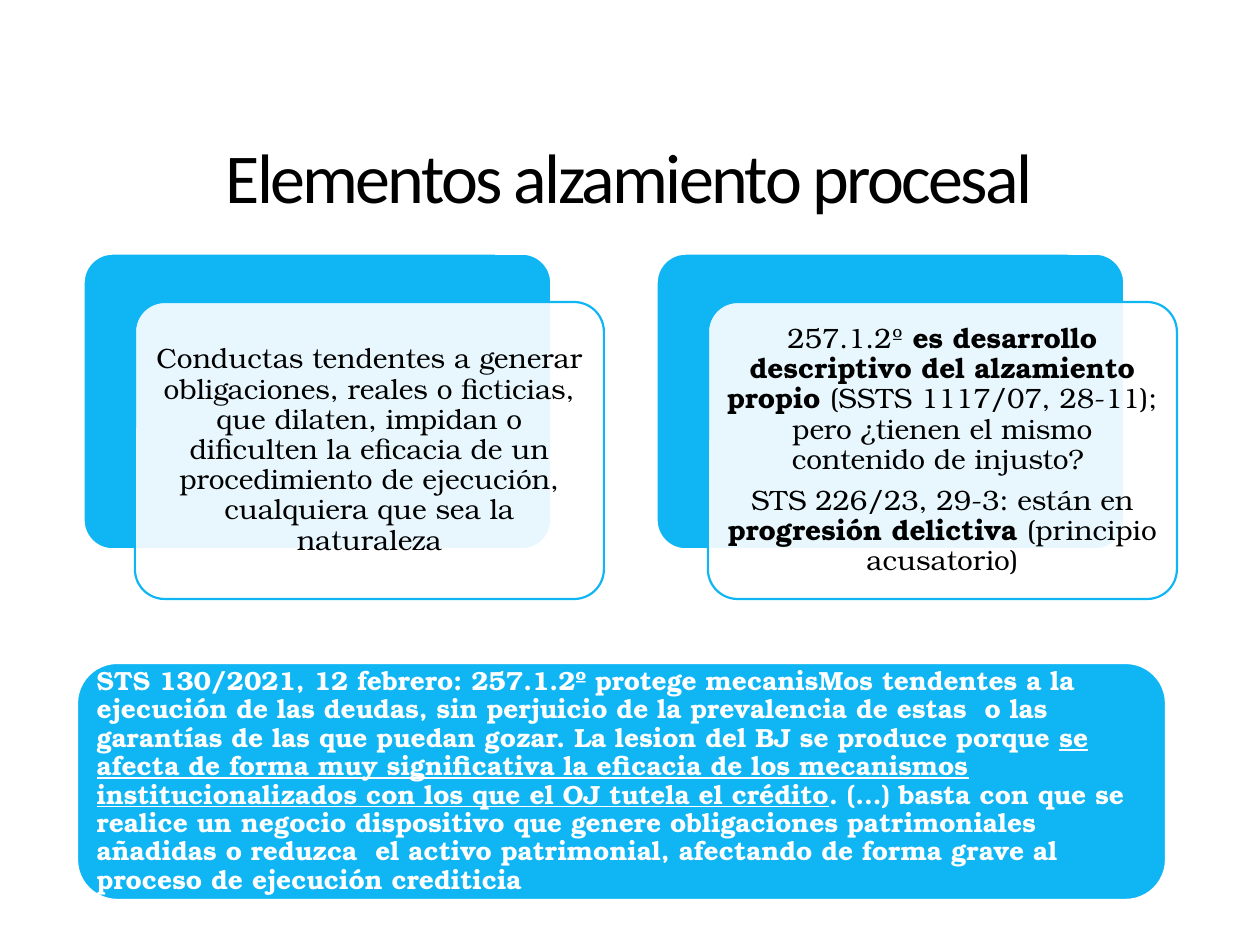
from lxml.etree import SubElement
from pptx import Presentation
from pptx.dml.color import RGBColor
from pptx.enum.shapes import MSO_SHAPE
from pptx.enum.text import MSO_ANCHOR, MSO_AUTO_SIZE, PP_ALIGN
from pptx.oxml.ns import qn
from pptx.util import Pt

COLORS = {"blue": "10B6F4", "white": "FFFFFF", "black": "000000"}
BODY_FONT = "TeX Gyre Bonum"
TITLE = "Elementos alzamiento procesal"

# Each card is a list of paragraphs; each paragraph a list of (text, style).
CARDS = [
    [[("Conductas tendentes a generar obligaciones, reales o ficticias, que dilaten, "
       "impidan o dificulten la eficacia de un procedimiento de ejecución, "
       "cualquiera que sea la naturaleza", "")]],
    [[("257.1.2º ", ""),
      ("es desarrollo descriptivo del alzamiento propio ", "bold"),
      ("(SSTS 1117/07, 28-11); pero ¿tienen el mismo contenido de injusto? ", "")],
     [("STS 226/23, 29-3: están en ", ""),
      ("progresión delictiva ", "bold"),
      ("(principio acusatorio)", "")]],
]
RULING = [[
    ("STS 130/2021, 12 febrero: 257.1.2º protege mecanisMos tendentes a la ejecución "
     "de las deudas, sin perjuicio de la prevalencia de estas  o las garantías de las "
     "que puedan gozar. La lesion del BJ se produce porque ", "bold"),
    ("se afecta de forma muy significativa la eficacia de los mecanismos "
     "institucionalizados con los que el OJ tutela el crédito", "bold underline"),
    (". (…) basta con que se realice un negocio dispositivo que genere obligaciones "
     "patrimoniales añadidas o reduzca  el activo patrimonial, afectando de forma "
     "grave al proceso de ejecución crediticia", "bold"),
]]

SLIDE_SIZE = (1260, 945)
TITLE_BOX = (181, 110, 896, 145)
RULING_BOX = (77, 663, 1089, 237)
CARD_LEFT, CARD_TOP, CARD_STEP = 83, 253, 573
CARD_SIZE = (469, 297)
CARD_SHIFT = (52, 49)  # from the back panel to the front one


def px(length):
    return round(length * 914400 / 126)


def color(name):
    return RGBColor.from_string(COLORS[name])


def set_insets(frame, inset):
    frame.margin_left = frame.margin_right = px(inset)
    frame.margin_top = frame.margin_bottom = px(inset)


def add_panel(page, place, fill, line, line_width, corner, opacity=100):
    panel = page.shapes.add_shape(MSO_SHAPE.ROUNDED_RECTANGLE, *map(px, place))
    panel.shadow.inherit = False
    panel.adjustments[0] = corner
    panel.fill.solid()
    panel.fill.fore_color.rgb = color(fill)
    if opacity < 100:
        swatch = panel.fill._xPr.find(qn("a:solidFill"))[0]
        SubElement(swatch, qn("a:alpha")).set("val", str(opacity * 1000))
    panel.line.color.rgb = color(line)
    panel.line.width = Pt(line_width)
    return panel


def write(panel, paragraphs, size, ink, align, inset):
    frame = panel.text_frame
    frame.word_wrap = True
    frame.vertical_anchor = MSO_ANCHOR.MIDDLE
    set_insets(frame, inset)
    for index, pieces in enumerate(paragraphs):
        para = frame.add_paragraph() if index else frame.paragraphs[0]
        para.alignment = align
        para.line_spacing = 0.9
        para.space_after = Pt(6)
        for text, style in pieces:
            span = para.add_run()
            span.text = text
            span.font.name = BODY_FONT
            span.font.size = Pt(size)
            span.font.color.rgb = color(ink)
            span.font.bold = "bold" in style
            span.font.underline = "underline" in style


def add_title(page):
    title = page.shapes.title
    title.left, title.top, title.width, title.height = map(px, TITLE_BOX)
    frame = title.text_frame
    frame.text = TITLE
    frame.word_wrap = True
    frame.auto_size = MSO_AUTO_SIZE.NONE
    frame.vertical_anchor = MSO_ANCHOR.MIDDLE
    set_insets(frame, 32)
    para = frame.paragraphs[0]
    para.alignment = PP_ALIGN.CENTER
    para.line_spacing = 0.85
    font = para.runs[0].font
    font.name = "Calibri"
    font.size = Pt(40)
    font.color.rgb = color("black")
    font._element.set("spc", "-150")


def main():
    deck = Presentation()
    deck.slide_width, deck.slide_height = map(px, SLIDE_SIZE)
    page = deck.slides.add_slide(deck.slide_layouts[5])
    add_title(page)

    for index, paragraphs in enumerate(CARDS):
        left = CARD_LEFT + index * CARD_STEP
        front_place = (left + CARD_SHIFT[0], CARD_TOP + CARD_SHIFT[1], *CARD_SIZE)
        add_panel(page, (left, CARD_TOP, *CARD_SIZE), "blue", "white", 2, 0.1)
        front = add_panel(page, front_place, "white", "blue", 1.25, 0.1, opacity=90)
        write(front, paragraphs, 16, "black", PP_ALIGN.CENTER, 9)

    ruling = add_panel(page, RULING_BOX, "blue", "white", 1.25, 0.17)
    write(ruling, RULING, 15, "white", PP_ALIGN.LEFT, 8)
    deck.save("out.pptx")


if __name__ == "__main__":
    main()
